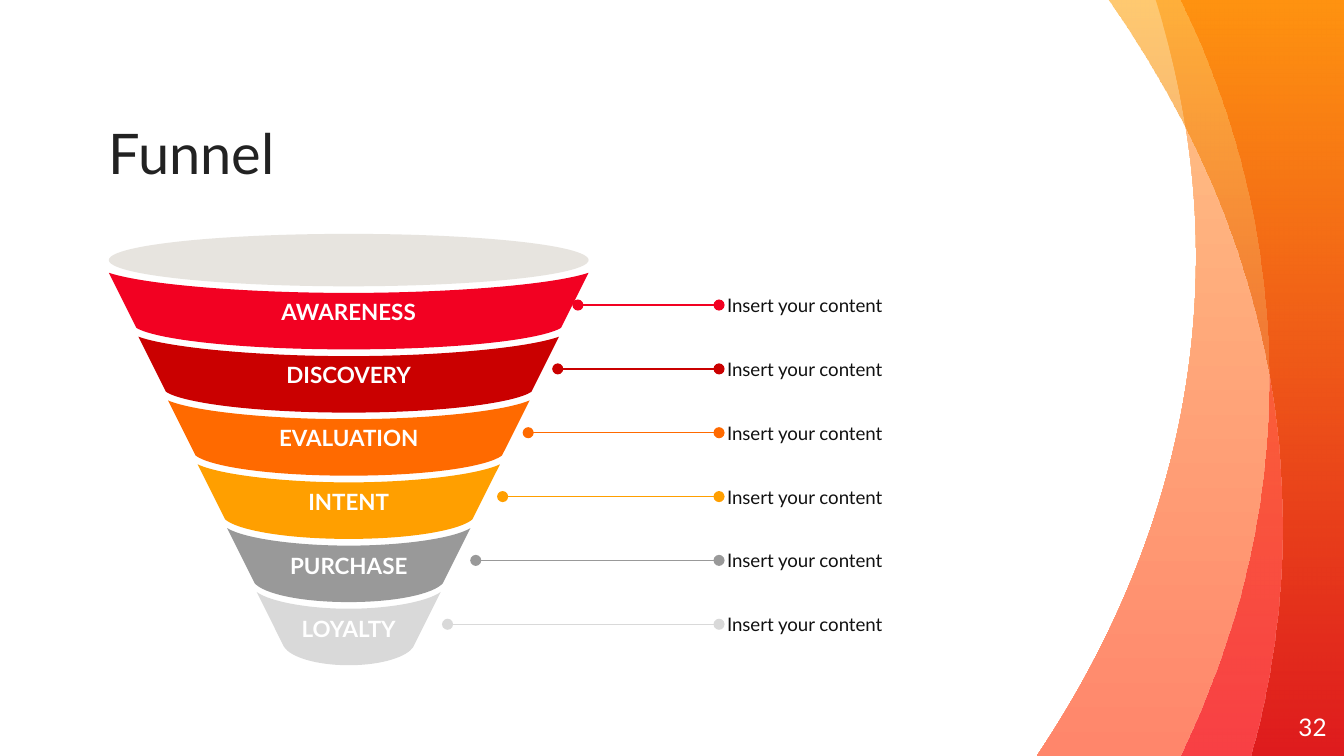
from typing import NamedTuple

from lxml import etree
from pptx import Presentation
from pptx.dml.color import RGBColor
from pptx.enum.shapes import MSO_CONNECTOR, MSO_SHAPE
from pptx.enum.text import MSO_ANCHOR, PP_ALIGN
from pptx.oxml.ns import qn
from pptx.util import Pt

LINE = MSO_CONNECTOR.STRAIGHT
OVAL = MSO_SHAPE.OVAL
MID, LOW = MSO_ANCHOR.MIDDLE, MSO_ANCHOR.BOTTOM
LEFT, MIDST, RIGHT = PP_ALIGN.LEFT, PP_ALIGN.CENTER, PP_ALIGN.RIGHT

PX = 4572  # EMU per px, 200 px to the inch
WIDE, HIGH = 2000, 1125
FONT = "Lato"
AXIS = 519  # centre line of the funnel
STEP, DIP = 95, 94  # pitch of the band corners and of the band arcs
SHRINK = 44  # half width lost from band to band

COLORS = {
    "red": "F20122", "dark": "CA0000", "orange": "FF6A00",
    "amber": "FF9F00", "gray": "999999", "pale": "D9D9D9",
    "rim": "E7E4DF", "title": "222222", "ink": "111111", "white": "FFFFFF",
    "peach": "FFC486", "salmon": "FF866B", "blood": "CC0000",
}

Point = tuple[int, int]
Piece = list[Point]  # one point for a line, three for a cubic curve


class Stage(NamedTuple):
    name: str
    color: str
    start: int  # left end of the leader line


class Stop(NamedTuple):
    color: str
    alpha: int


class Wave(NamedTuple):
    start: Point
    curves: list[Piece]
    top: Stop
    base: Stop


STAGES = [
    Stage("AWARENESS", "red", 860),
    Stage("DISCOVERY", "dark", 830),
    Stage("EVALUATION", "orange", 786),
    Stage("INTENT", "amber", 748),
    Stage("PURCHASE", "gray", 708),
    Stage("LOYALTY", "pale", 666),
]

WAVES = [
    Wave((1720, 0), [[(1758, 122), (1780, 250), (1780, 382)],
                     [(1780, 648), (1694, 900), (1543, HIGH)]],
         Stop("peach", 100), Stop("salmon", 100)),
    Wave((1756, 0), [[(1842, 178), (1888, 368), (1888, 564)],
                     [(1888, 762), (1840, 952), (1757, HIGH)]],
         Stop("orange", 72), Stop("red", 52)),
    Wave((1650, 0), [[(1816, 238), (1908, 502), (1908, 782)],
                     [(1908, 900), (1892, 1016), (1861, HIGH)]],
         Stop("amber", 56), Stop("blood", 57)),
]


def rgb(name: str) -> RGBColor:
    return RGBColor.from_string(COLORS[name])


def arc(half: int, edge: int, low: int, outer: float, inner: float,
        drop: float) -> list[Point]:
    """Points of two curves that sag from left to right about the axis."""
    side = [(AXIS - half, edge),
            (AXIS - round(half * outer), edge + round((low - edge) * drop)),
            (AXIS - round(half * inner), low), (AXIS, low)]
    return side + [(2 * AXIS - x, y) for x, y in side[-2::-1]]


def outline(shapes, start: Point, pieces: list[Piece]):
    """Closed outline of lines and cubic curves."""
    pen = shapes.build_freeform(*start, scale=PX)
    pen.add_line_segments([spot for piece in pieces for spot in piece])
    shape = pen.convert_to_shape()
    shape.shadow.inherit = False
    shape.line.fill.background()
    # Join each three line points into one curve
    legs = iter(list(shape._element.spPr.iter(qn("a:lnTo"))))
    for piece in pieces:
        first, *others = [next(legs) for _ in piece]
        if others:
            first.tag = qn("a:cubicBezTo")
        for leg in others:
            first.append(leg[0])
            leg.getparent().remove(leg)
    return shape


def paint(shape, color: str) -> None:
    shape.fill.solid()
    shape.fill.fore_color.rgb = rgb(color)


def write(shape, text: str, size: int, color: str, align=LEFT, anchor=MID,
          bold: bool = False) -> None:
    frame = shape.text_frame
    frame.text = text
    frame.word_wrap = True
    frame.vertical_anchor = anchor
    para = frame.paragraphs[0]
    para.alignment = align
    font = para.runs[0].font
    font.name, font.size, font.bold = FONT, Pt(size), bold
    font.color.rgb = rgb(color)


def label(shapes, box: tuple[int, int, int, int], text: str, size: int,
          color: str, align=LEFT, anchor=MID) -> None:
    shape = shapes.add_textbox(*(v * PX for v in box))
    frame = shape.text_frame
    frame.margin_left = frame.margin_right = 0
    frame.margin_top = frame.margin_bottom = 0
    write(shape, text, size, color, align, anchor)


def draw_wave(shapes, wave: Wave) -> None:
    shape = outline(shapes, wave.start,
                    wave.curves + [[(WIDE, HIGH)], [(WIDE, 0)]])
    shape.fill.gradient()
    shape.fill.gradient_angle = 270  # from top to bottom
    stops = (wave.top, wave.base)
    for mark, stop in zip(shape.fill.gradient_stops, stops):
        mark.color.rgb = rgb(stop.color)
    tints = shape._element.spPr.iter(qn("a:srgbClr"))
    for tint, stop in zip(tints, stops):
        etree.SubElement(tint, qn("a:alpha")).set("val", str(stop.alpha * 1000))


def draw_band(shapes, stage: Stage, i: int) -> None:
    top = arc(357 - SHRINK * i, 406 + STEP * i, 436 + DIP * i, 0.85, 0.42, 0.6)
    base = arc(316 - SHRINK * i, 488 + STEP * i, 520 + DIP * i, 0.91, 0.53, 0.53)
    base.reverse()
    shape = outline(shapes, top[0],
                    [top[1:4], top[4:], base[:1], base[1:4], base[4:]])
    paint(shape, stage.color)
    write(shape, stage.name, 12, "white", MIDST, bold=True)


def draw_lead(shapes, stage: Stage, i: int) -> None:
    y = 454 + STEP * i
    lead = shapes.add_connector(LINE, stage.start * PX, y * PX, 1070 * PX, y * PX)
    lead.line.color.rgb = rgb(stage.color)
    lead.line.width = Pt(0.75)
    for end in ("a:headEnd", "a:tailEnd"):
        etree.SubElement(lead.line._get_or_add_ln(), qn(end)).set("type", "oval")
    etree.SubElement(lead._element.spPr, qn("a:effectLst"))
    label(shapes, (1082, y - 34, 552, 68), "Insert your content", 10, "ink")


def main() -> None:
    deck = Presentation()
    deck.slide_width, deck.slide_height = WIDE * PX, HIGH * PX
    shapes = deck.slides.add_slide(deck.slide_layouts[6]).shapes

    # Waves on the right
    for wave in WAVES:
        draw_wave(shapes, wave)

    # Title and page number
    label(shapes, (162, 114, 1320, 162), "Funnel", 30, "title", anchor=LOW)
    label(shapes, (1854, 1038, 120, 86), "32", 13, "white", RIGHT)

    # Funnel
    funnel = shapes.add_group_shape().shapes
    for i, stage in enumerate(STAGES):
        draw_band(funnel, stage, i)
    rim = funnel.add_shape(OVAL, 162 * PX, 348 * PX, 714 * PX, 78 * PX)
    rim.shadow.inherit = False
    rim.line.fill.background()
    paint(rim, "rim")

    # Leader lines with their notes
    for i, stage in enumerate(STAGES):
        draw_lead(shapes, stage, i)

    deck.save("out.pptx")


if __name__ == "__main__":
    main()
